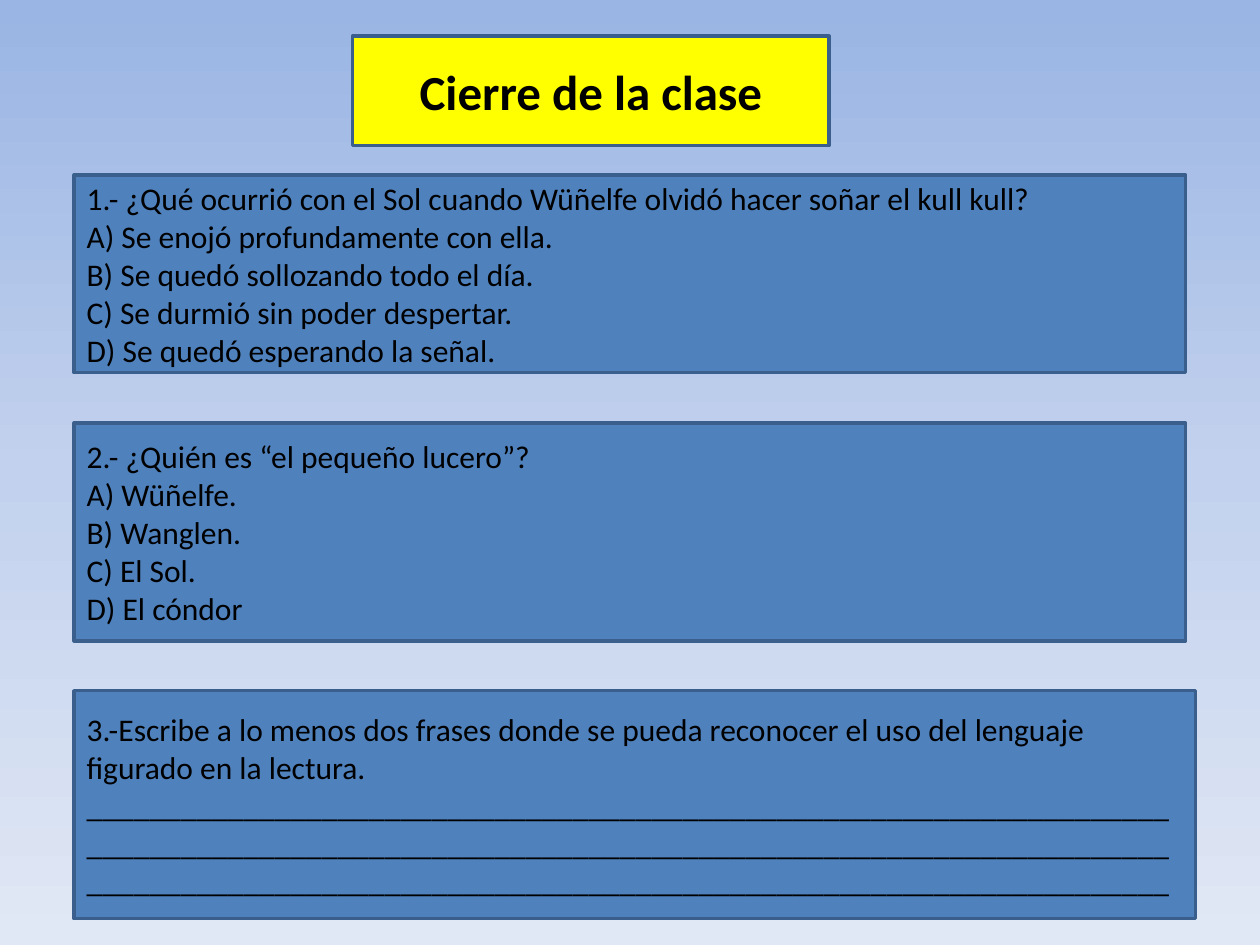
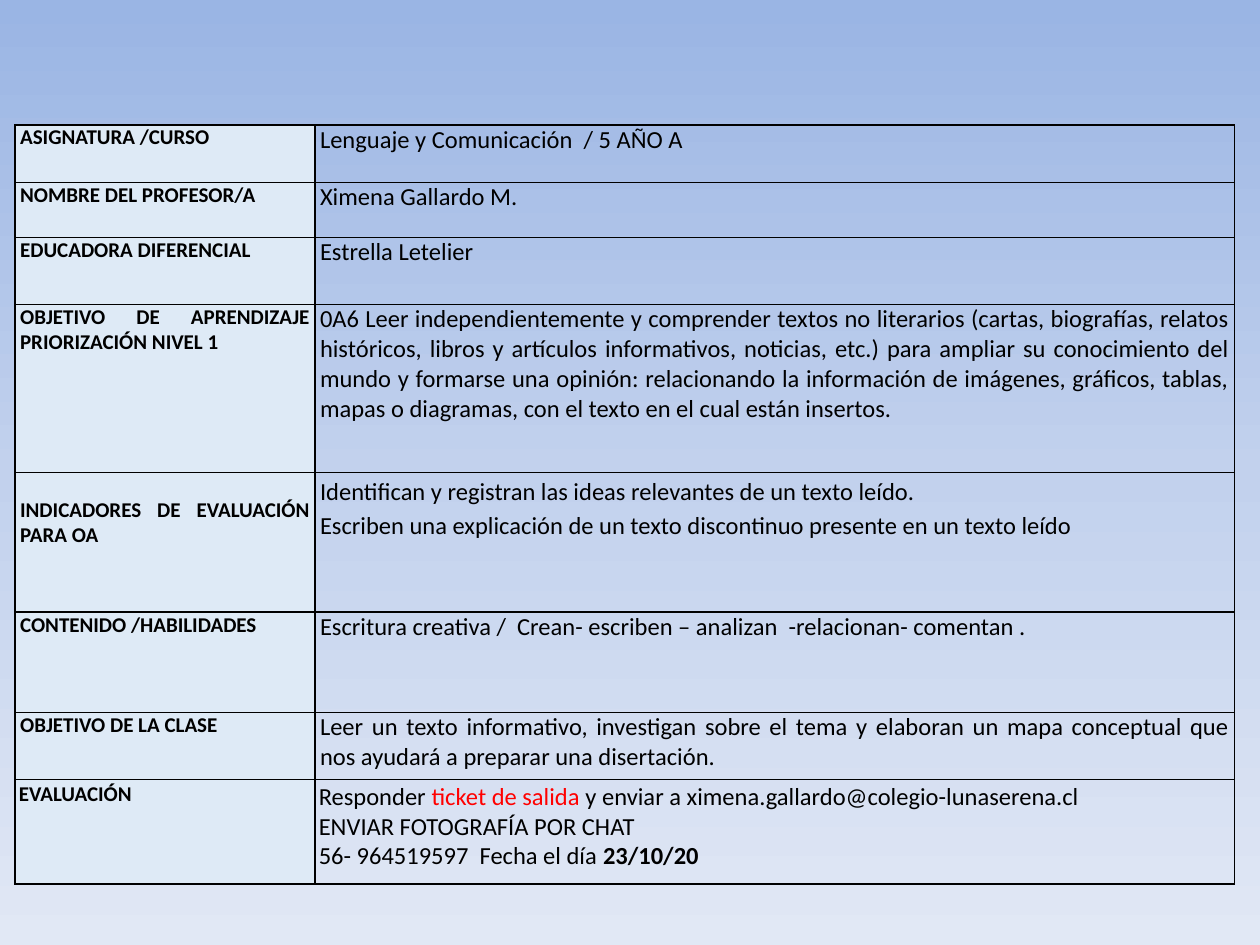
"""Build the closing-questions slide and the lesson-plan table slide."""
from copy import deepcopy

from lxml.etree import SubElement
from pptx import Presentation
from pptx.dml.color import RGBColor
from pptx.enum.shapes import MSO_SHAPE
from pptx.enum.text import MSO_ANCHOR, PP_ALIGN
from pptx.oxml.ns import qn
from pptx.util import Pt

FONT = "Calibri"
COLORS = {
    "sky_top": "9AB5E4", "sky_middle": "C2D1ED", "sky_bottom": "E1E8F5",
    "panel": "4F81BD", "outline": "3A5F8C", "title": "FFFF00",
    "label": "DEEAF6", "text": "000000", "accent": "FF0000",
}

TITLE = "Cierre de la clase"
TITLE_AREA = (201.5, 20.7, 272.3, 62.5)
PANEL_LEFT = 42.4
QUESTIONS = [
    (100, 635, 113, [
        "1.- ¿Qué ocurrió con el Sol cuando Wüñelfe olvidó hacer soñar el kull kull?",
        "A) Se enojó profundamente con ella.",
        "B) Se quedó sollozando todo el día.",
        "C) Se durmió sin poder despertar.",
        "D) Se quedó esperando la señal.",
    ]),
    (241.7, 635, 124.6, [
        "2.- ¿Quién es “el pequeño lucero”?",
        "A) Wüñelfe.",
        "B) Wanglen.",
        "C) El Sol.",
        "D) El cóndor",
    ]),
    (394.7, 640.8, 130.3, [
        "3.-Escribe a lo menos dos frases donde se pueda reconocer el uso del "
        "lenguaje figurado en la lectura.",
        "_" * 207,
    ]),
]

TABLE_CORNER = (8.6, 71.4)
COLUMN_WIDTHS = (171.4, 525.6)
CELL_MARGINS = {"side": 2.9, "top": 0}
LESSON_PLAN = [
    (32.8, "ASIGNATURA /CURSO", ["Lenguaje y Comunicación  / 5 AÑO A"], {}),
    (31.5, "NOMBRE DEL PROFESOR/A", ["Ximena Gallardo M."], {}),
    (38.2, "EDUCADORA DIFERENCIAL", ["Estrella Letelier"], {}),
    (96, "OBJETIVO DE APRENDIZAJE PRIORIZACIÓN NIVEL 1", [
        "0A6 Leer independientemente y comprender textos no literarios (cartas, "
        "biografías, relatos históricos, libros y artículos informativos, "
        "noticias, etc.) para ampliar su conocimiento del mundo y formarse una "
        "opinión: relacionando la información de imágenes, gráficos, tablas, "
        "mapas o diagramas, con el texto en el cual están insertos.",
    ], {}),
    (80, "INDICADORES DE EVALUACIÓN PARA OA", [
        "Identifican y registran las ideas relevantes de un texto leído.",
        "Escriben una explicación de un texto discontinuo presente en un texto leído",
    ], {"label_top": 14.4, "spacing": 1.15, "align": PP_ALIGN.LEFT}),
    (57.4, "CONTENIDO /HABILIDADES", [
        "Escritura creativa /  Crean- escriben – analizan  -relacionan- comentan .",
    ], {}),
    (38.2, "OBJETIVO DE LA CLASE", [
        "Leer un texto informativo, investigan sobre el tema y elaboran un mapa "
        "conceptual que nos ayudará a preparar una disertación.",
    ], {}),
    (59.8, "EVALUACIÓN", [
        ["Responder ", ("ticket de salida ", {"color": "accent"}),
         "y enviar a ximena.gallardo@colegio-lunaserena.cl"],
        "ENVIAR FOTOGRAFÍA POR CHAT",
        ["56- 964519597  Fecha el día ", ("23/10/20", {"bold": True})],
    ], {"side": 2.2, "top": 1.4}),
]


def rgb(name):
    """Return the named colour."""
    return RGBColor.from_string(COLORS[name])


def write(frame, paragraphs, size, bold=False, align=PP_ALIGN.LEFT, spacing=None):
    """Fill a text frame; a paragraph is a string or a list of spans."""
    for index, content in enumerate(paragraphs):
        para = frame.add_paragraph() if index else frame.paragraphs[0]
        para.alignment = align
        para.line_spacing = spacing
        for part in [content] if isinstance(content, str) else content:
            text, changes = (part, {}) if isinstance(part, str) else part
            span = para.add_run()
            span.text = text
            span.font.name = FONT
            span.font.size = Pt(size)
            span.font.bold = changes.get("bold", bold)
            span.font.color.rgb = rgb(changes.get("color", "text"))


def paint(shape, fill):
    """Give a shape its fill and the shared outline."""
    shape.fill.solid()
    shape.fill.fore_color.rgb = rgb(fill)
    shape.line.color.rgb = rgb("outline")
    shape.line.width = Pt(2)


def set_background(master):
    """Put the three-stop vertical gradient on the master."""
    fill = master.background.fill
    fill.gradient()
    fill.gradient_angle = 270
    stop_list = next(master.element.iter(qn("a:gsLst")))
    stop_list.insert(1, deepcopy(stop_list[0]))
    names = ("sky_top", "sky_middle", "sky_bottom")
    for index, (stop, name) in enumerate(zip(fill.gradient_stops, names)):
        stop.position = index / 2
        stop.color.rgb = rgb(name)


def add_title(slide):
    """Turn the title placeholder into the rounded yellow heading."""
    title = slide.shapes.title
    title.left, title.top, title.width, title.height = map(Pt, TITLE_AREA)
    geometry = SubElement(title.element.spPr, qn("a:prstGeom"), prst="roundRect")
    SubElement(geometry, qn("a:avLst"))
    paint(title, "title")
    title.text_frame.vertical_anchor = MSO_ANCHOR.MIDDLE
    write(title.text_frame, [TITLE], size=28, bold=True, align=PP_ALIGN.CENTER)


def add_question(slide, top, width, height, lines):
    """Add one question panel."""
    box = slide.shapes.add_shape(
        MSO_SHAPE.RECTANGLE, Pt(PANEL_LEFT), Pt(top), Pt(width), Pt(height))
    box.shadow.inherit = False
    paint(box, "panel")
    box.text_frame.vertical_anchor = MSO_ANCHOR.MIDDLE
    write(box.text_frame, lines, size=18)


def format_cell(cell, side, top, fill=None):
    """Set the margins, borders and fill of a cell."""
    cell.margin_left = cell.margin_right = Pt(side)
    cell.margin_top, cell.margin_bottom = Pt(top), Pt(0)
    properties = cell._tc.get_or_add_tcPr()
    for edge in ("lnL", "lnR", "lnT", "lnB"):
        line = SubElement(properties, qn(f"a:{edge}"), w=str(Pt(1)))
        solid = SubElement(line, qn("a:solidFill"))
        SubElement(solid, qn("a:srgbClr"), val=COLORS["text"])
    if fill:
        cell.fill.solid()
        cell.fill.fore_color.rgb = rgb(fill)
    else:
        cell.fill.background()


def add_lesson_table(slide):
    """Add the lesson-plan table."""
    total_height = sum(row[0] for row in LESSON_PLAN)
    table = slide.shapes.add_table(
        len(LESSON_PLAN), len(COLUMN_WIDTHS), *map(Pt, TABLE_CORNER),
        Pt(sum(COLUMN_WIDTHS)), Pt(total_height)).table
    table.first_row = table.horz_banding = False
    for column, width in zip(table.columns, COLUMN_WIDTHS):
        column.width = Pt(width)
    for row, (height, label, lines, options) in zip(table.rows, LESSON_PLAN):
        row.height = Pt(height)
        label_cell, value_cell = row.cells
        settings = CELL_MARGINS | options
        side, top = settings["side"], settings["top"]
        format_cell(label_cell, side, settings.get("label_top", top), fill="label")
        format_cell(value_cell, side, top)
        write(label_cell.text_frame, [label], size=12, bold=True,
              align=PP_ALIGN.JUSTIFY)
        write(value_cell.text_frame, lines, size=14,
              align=settings.get("align", PP_ALIGN.JUSTIFY),
              spacing=settings.get("spacing"))


def main():
    """Build and save the deck."""
    deck = Presentation()
    deck.slide_width, deck.slide_height = Pt(720), Pt(540)
    set_background(deck.slide_master)
    title_only, blank = deck.slide_layouts[5], deck.slide_layouts[6]

    closing = deck.slides.add_slide(title_only)
    add_title(closing)
    for question in QUESTIONS:
        add_question(closing, *question)

    add_lesson_table(deck.slides.add_slide(blank))
    deck.save("out.pptx")


if __name__ == "__main__":
    main()
